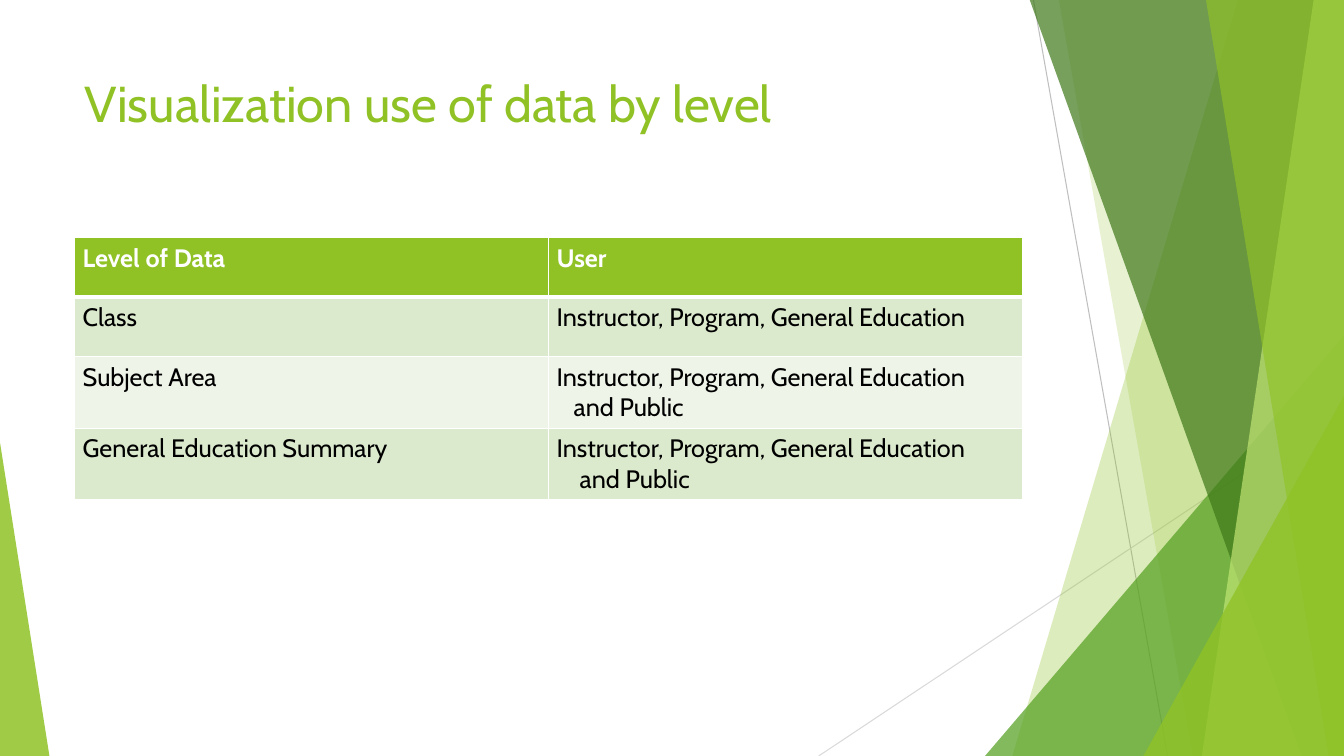
from lxml import etree
from pptx import Presentation
from pptx.dml.color import RGBColor
from pptx.enum.shapes import MSO_CONNECTOR, MSO_SHAPE
from pptx.enum.text import MSO_ANCHOR, MSO_AUTO_SIZE, PP_ALIGN
from pptx.oxml import parse_xml
from pptx.oxml.ns import nsdecls, qn
from pptx.util import Inches, Pt

COLORS = {
    "lime": "90C226", "green": "54A021", "forest": "3F7819", "pale": "C0E474",
    "white": "FFFFFF", "black": "000000", "gray": "BFBFBF", "light_gray": "D9D9D9",
    "band": "DBE9CD", "light_band": "EEF4E8",
}
FONT = "Cabin"
W, H = 13.33, 7.5


def paint(sp, color, alpha):
    sp.shadow.inherit = False
    sp.line.fill.background()
    sp.fill.solid()
    sp.fill.fore_color.rgb = RGBColor.from_string(COLORS[color])
    clr = sp.element.spPr.find(qn("a:solidFill"))[0]
    etree.SubElement(clr, qn("a:alpha"), val=str(alpha * 1000))


def style(p, size, color, bold=False):
    for r in p.runs:
        r.font.name = FONT
        r.font.size = Pt(size)
        r.font.bold = bold
        r.font.color.rgb = RGBColor.from_string(COLORS[color])


prs = Presentation()
prs.slide_width, prs.slide_height = Inches(W), Inches(H)
s = prs.slides.add_slide(prs.slide_layouts[5])

for x1, y1, x2, y2, color in [
    (10.25, 0, 11.58, H, "gray"),
    (W, 4.03, 8.12, H, "light_gray"),
]:
    line = s.shapes.add_connector(
        MSO_CONNECTOR.STRAIGHT, Inches(x1), Inches(y1), Inches(x2), Inches(y2))
    line.line.color.rgb = RGBColor.from_string(COLORS[color])
    line.line.width = Pt(0.75)
    etree.SubElement(line.element.spPr, qn("a:effectLst"))

facets = [
    ("band", 12.28, 10.04, "lime", 30),
    ("band", 10.5, 11.83, "lime", 20),
    ("triangle", 9.77, 3.33, 3.56, 1, "green", 72),
    ("band", 10.21, 12.91, "forest", 70),
    ("band", 13.03, 11.92, "pale", 70),
    ("band", 11.96, 13.18, "lime", 65),
    ("triangle", 11.34, 3.93, 1.99, 1, "lime", 80),
    ("triangle", 0, 4.39, 0.49, 0, "lime", 85),
]
for kind, *place, color, alpha in facets:
    if kind == "band":
        top_x, bottom_x = place
        fb = s.shapes.build_freeform(Inches(top_x), Inches(-0.01))
        fb.add_line_segments([
            (Inches(W), Inches(-0.01)), (Inches(W), Inches(H)),
            (Inches(bottom_x), Inches(H))], close=True)
        sp = fb.convert_to_shape()
    else:
        x, y, width, apex = place
        sp = s.shapes.add_shape(
            MSO_SHAPE.ISOSCELES_TRIANGLE, Inches(x), Inches(y), Inches(width), Inches(H - y))
        sp.adjustments[0] = apex
    paint(sp, color, alpha)

title = s.shapes.title
title.element.getparent().append(title.element)
title.left, title.top = Inches(0.74), Inches(0.67)
title.width, title.height = Inches(9.4), Inches(1.44)
tf = title.text_frame
tf.text = "Visualization use of data by level"
tf.word_wrap = True
tf.auto_size = MSO_AUTO_SIZE.NONE
tf.vertical_anchor = MSO_ANCHOR.TOP
p = tf.paragraphs[0]
p.alignment = PP_ALIGN.LEFT
style(p, 36, "lime")

users = "Instructor, Program, General Education"
rows = [
    ("Level of Data", "User", "lime", 0),
    ("Class", users, "band", 0),
    ("Subject Area", users + "\nand Public", "light_band", 0.17),
    ("General Education Summary", users + "\nand Public", "band", 0.23),
]
table = s.shapes.add_table(
    len(rows), 2, Inches(0.74), Inches(2.36), Inches(9.4), Inches(0.59 * len(rows))).table
for i, (level, user, fill, indent) in enumerate(rows):
    for j, text in enumerate((level, user)):
        cell = table.cell(i, j)
        cell.text_frame.text = text
        cell.margin_left = cell.margin_right = Inches(0.08)
        cell.margin_top = cell.margin_bottom = Inches(0.05)
        for n, p in enumerate(cell.text_frame.paragraphs):
            style(p, 18, "black" if i else "white", bold=i == 0)
            if n:
                p._p.get_or_add_pPr().set("marL", str(Inches(indent)))
        tcPr = cell._tc.get_or_add_tcPr()
        for side in "LRTB":
            thick = (i, side) in [(0, "B"), (1, "T")]
            tcPr.append(parse_xml(
                f'<a:ln{side} {nsdecls("a")} w="{Pt(3 if thick else 1)}"><a:solidFill>'
                f'<a:srgbClr val="{COLORS["white"]}"/></a:solidFill></a:ln{side}>'))
        cell.fill.solid()
        cell.fill.fore_color.rgb = RGBColor.from_string(COLORS[fill])

prs.save("out.pptx")
